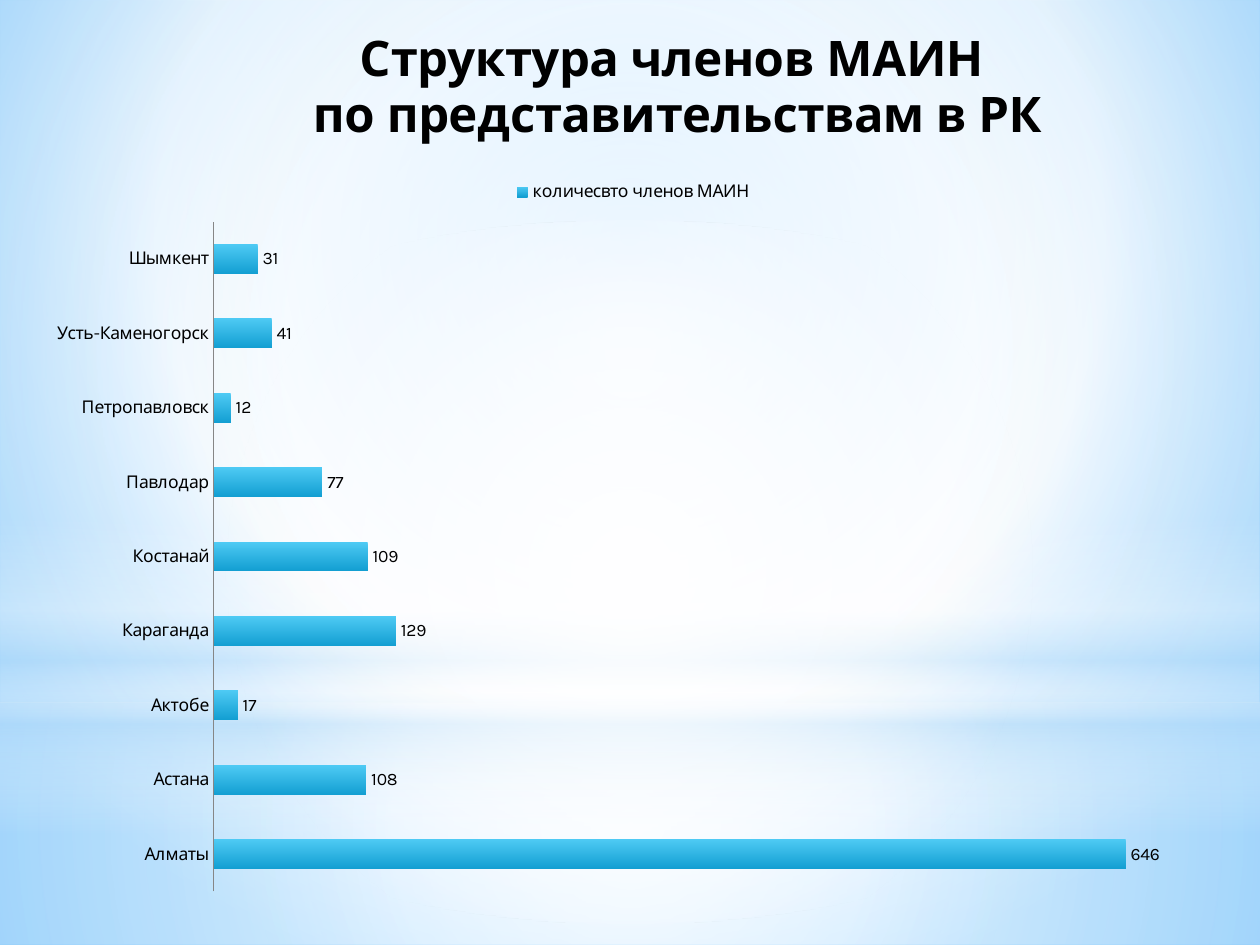
from pptx import Presentation, util as u
from pptx.chart.data import CategoryChartData
from pptx.dml.color import RGBColor
from pptx.enum import chart as ch, shapes, text
from pptx.oxml import parse_xml
from pptx.oxml.ns import nsdecls, qn

HEADING = "Структура членов МАИН \nпо представительствам в РК"
SERIES = "количесвто членов МАИН"
MEMBERS = {
    "Алматы": 646, "Астана": 108, "Актобе": 17,
    "Караганда": 129, "Костанай": 109, "Павлодар": 77,
    "Петропавловск": 12, "Усть-Каменогорск": 41, "Шымкент": 31,
}
COLORS = {
    "text": "000000", "axis": "868686", "white": "FFFFFF", "haze": "B4DCFA",
    "sky": "9ED5FF", "deep": "5BB9FF", "bar_top": "4ECAF4", "bar_bottom": "139FD2",
}
CENTRE = (50, 50, 50, 50)
BACKDROP = [(0, "sky", 100), (60, "white", 100), (100, "deep", 100)]
BARS = [(0, "bar_top", 100), (100, "bar_bottom", 100)]
RECT, OVAL = shapes.MSO_SHAPE.RECTANGLE, shapes.MSO_SHAPE.OVAL
GLOWS = [
    (RECT, 14.17, 4.88, CENTRE,
     [(0, "white", 91), (37, "white", 76), (100, "haze", 79)]),
    (RECT, 0, 14.17, CENTRE,
     [(0, "white", 89), (48, "white", 62), (100, "haze", 79)]),
    (RECT, 10.46, 6.35, None,
     [(0, "white", 0), (29, "white", 30), (45, "haze", 40),
      (55, "white", 26), (65, "haze", 60), (100, "white", 0)]),
    (OVAL, 4.45, 14.17, CENTRE, [(0, "white", 100), (56, "white", 0)]),
]


def color(name):
    return RGBColor.from_string(COLORS[name])


def set_gradient(fill, holder, stops, focus=None):
    fill.solid()
    marks = "".join(
        f'<a:gs pos="{pos * 1000}"><a:srgbClr val="{COLORS[name]}">'
        f'<a:alpha val="{alpha * 1000}"/></a:srgbClr></a:gs>'
        for pos, name, alpha in stops)
    if focus:
        sides = " ".join(f'{s}="{v * 1000}"' for s, v in zip("ltrb", focus))
        course = f'<a:path path="circle"><a:fillToRect {sides}/></a:path>'
    else:
        course = '<a:lin ang="5400000" scaled="0"/>'
    gradient = parse_xml(f'<a:gradFill {nsdecls("a")} rotWithShape="1">'
                         f'<a:gsLst>{marks}</a:gsLst>{course}</a:gradFill>')
    holder.replace(holder.find(qn("a:solidFill")), gradient)


def place(part, index, **box):
    for old in part.findall(qn("c:layout")):
        part.remove(old)
    modes = "".join(f'<c:{k}Mode val="edge"/>' for k in "xy")
    sizes = "".join(f'<c:{k} val="{v}"/>' for k, v in box.items())
    target = '<c:layoutTarget val="inner"/>' if "w" in box else ""
    part.insert(index, parse_xml(
        f'<c:layout {nsdecls("c")}><c:manualLayout>{target}{modes}{sizes}'
        '</c:manualLayout></c:layout>'))


def set_format(target, values):
    for name, value in values.items():
        setattr(target, name, value)


deck = Presentation()
set_format(deck, {"slide_width": u.Cm(25.4), "slide_height": u.Cm(19.05)})
slide = deck.slides.add_slide(deck.slide_layouts[6])
backdrop = slide.background.fill
backdrop.solid()
set_gradient(backdrop, slide.element.find(".//" + qn("p:bgPr")),
             BACKDROP, (20, 10, 20, 60))

for outline, top, height, focus, stops in GLOWS:
    glow = slide.shapes.add_shape(outline, 0, u.Cm(top), deck.slide_width, u.Cm(height))
    glow.shadow.inherit = False
    glow.line.fill.background()
    set_gradient(glow.fill, glow.element.spPr, stops, focus)

data = CategoryChartData()
data.categories = list(MEMBERS)
data.add_series(SERIES, list(MEMBERS.values()))
members = slide.shapes.add_chart(
    ch.XL_CHART_TYPE.BAR_CLUSTERED,
    u.Cm(0.71), u.Cm(0.33), u.Cm(24), u.Cm(18), data).chart
set_format(members.font, {"name": "Karla", "size": u.Pt(10)})
members.font.color.rgb = color("text")

heading = members.chart_title
heading.text_frame.text = HEADING
for line in heading.text_frame.paragraphs:
    line.alignment = text.PP_ALIGN.CENTER
    for run in line.runs:
        set_format(run.font, {"name": "Karla", "size": u.Pt(28), "bold": True})
        run.font.color.rgb = color("text")

members.has_legend = True
set_format(members.legend, {"position": ch.XL_LEGEND_POSITION.TOP,
                            "include_in_layout": False})

cities = members.category_axis
set_format(cities, {"major_tick_mark": ch.XL_TICK_MARK.NONE,
                    "minor_tick_mark": ch.XL_TICK_MARK.NONE,
                    "has_major_gridlines": False})
cities.format.line.color.rgb = color("axis")
set_format(members.value_axis, {"minimum_scale": 0, "maximum_scale": 700,
                                "has_major_gridlines": False, "visible": False})

plot = members.plots[0]
set_format(plot, {"gap_width": 150, "overlap": -25,
                  "vary_by_categories": False, "has_data_labels": True})
set_format(plot.data_labels, {"show_value": True,
                              "position": ch.XL_LABEL_POSITION.OUTSIDE_END})
bars = plot.series[0]
bars.invert_if_negative = False
bar_fill = bars.format.fill
bar_fill.solid()
set_gradient(bar_fill, bars.format.element.find(qn("c:spPr"))
             if hasattr(bars.format, "element")
             else members.element.find(".//" + qn("c:ser") + "/" + qn("c:spPr")), BARS)

area = members.element.find(".//" + qn("c:plotArea"))
place(area, 0, x=0.15, y=0.23, w=0.83, h=0.75)
place(members.element.find(".//" + qn("c:title")), 1, x=0.23, y=0.01)
place(members.element.find(".//" + qn("c:legend")), 1, x=0.4, y=0.18)

deck.save("out.pptx")
